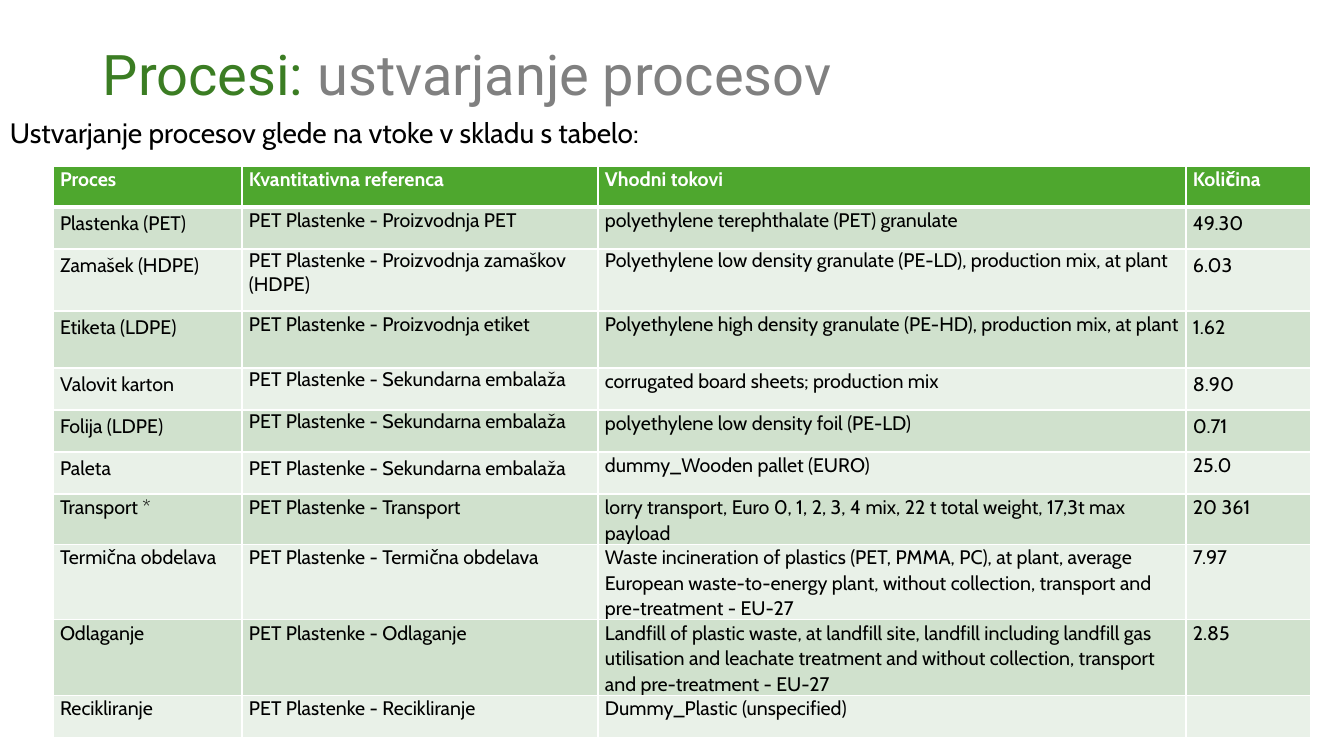
"""Build a slide with a table of processes, their inputs and amounts."""
from pptx import Presentation
from pptx import util as u
from pptx.dml.color import RGBColor
from pptx.enum import text
from pptx.oxml import parse_xml
from pptx.oxml.ns import nsdecls

PX = 914400 / 100.8
WHITE = RGBColor(0xFF, 0xFF, 0xFF)
BLACK = RGBColor(0x00, 0x00, 0x00)
GREY = RGBColor(0x80, 0x80, 0x80)
TITLE_GREEN = RGBColor(0x3B, 0x7D, 0x23)
HEADER_GREEN = RGBColor(0x4E, 0xA7, 0x2E)
BANDS = (RGBColor(0xE9, 0xF1, 0xE8), RGBColor(0xD0, 0xE1, 0xCD))

COLUMN_WIDTHS = (189, 356, 588, 125)
ROW_HEIGHTS = (41, 42, 62, 57) + (42,) * 7
PLAIN = (1.07,) * 4
LOOSE_ENDS = (1.2, 1.07, 1.07, 1.2)
TIGHT_REFERENCE = (1.2, 1, 1.07, 1.2)
TIGHT_MIDDLE = (1.2, 1, 1, 1.2)
LOOSE_START = (1.2, 1.2, 1.07, 1.07)

ROWS = (
    (PLAIN, "Proces", "Kvantitativna referenca", "Vhodni tokovi", "Količina"),
    (LOOSE_ENDS, "Plastenka (PET)", "PET Plastenke - Proizvodnja PET",
     "polyethylene terephthalate (PET) granulate", "49.30"),
    (TIGHT_MIDDLE, "Zamašek (HDPE)", "PET Plastenke - Proizvodnja zamaškov (HDPE)",
     "Polyethylene low density granulate (PE-LD), production mix, at plant", "6.03"),
    (LOOSE_ENDS, "Etiketa (LDPE)", "PET Plastenke - Proizvodnja etiket",
     "Polyethylene high density granulate (PE-HD), production mix, at plant", "1.62"),
    (TIGHT_REFERENCE, "Valovit karton", "PET Plastenke - Sekundarna embalaža",
     "corrugated board sheets; production mix", "8.90"),
    (TIGHT_REFERENCE, "Folija (LDPE)", "PET Plastenke - Sekundarna embalaža",
     "polyethylene low density foil (PE-LD)", "0.71"),
    (LOOSE_START, "Paleta", "PET Plastenke - Sekundarna embalaža",
     "dummy_Wooden pallet (EURO)", "25.0"),
    (PLAIN, "Transport *", "PET Plastenke - Transport",
     "lorry transport, Euro 0, 1, 2, 3, 4 mix, 22 t total weight, 17,3t max payload",
     "20 361"),
    (PLAIN, "Termična obdelava", "PET Plastenke - Termična obdelava",
     "Waste incineration of plastics (PET, PMMA, PC), at plant, average European "
     "waste-to-energy plant, without collection, transport and pre-treatment - EU-27",
     "7.97"),
    (PLAIN, "Odlaganje", "PET Plastenke - Odlaganje",
     "Landfill of plastic waste, at landfill site, landfill including landfill gas "
     "utilisation and leachate treatment and without collection, transport and "
     "pre-treatment - EU-27", "2.85"),
    (PLAIN, "Recikliranje", "PET Plastenke - Recikliranje",
     "Dummy_Plastic (unspecified)", ""),
)


def px(length):
    """Turn px into EMU."""
    return u.Emu(round(length * PX))


def write(para, wording, size=14, font="Cabin", color=BLACK, bold=False, spacing=1.07):
    """Append a formatted span to a paragraph."""
    para.line_spacing = spacing
    span = para.add_run()
    span.text = wording
    span.font.size = u.Pt(size)
    span.font.name = font
    span.font.color.rgb = color
    span.font.bold = bold


def add_text_box(page, left, top, width, height, anchor=text.MSO_ANCHOR.TOP):
    """Add a wrapping text box and return its first paragraph."""
    box = page.shapes.add_textbox(px(left), px(top), px(width), px(height))
    box.text_frame.word_wrap = True
    box.text_frame.vertical_anchor = anchor
    return box.text_frame.paragraphs[0]


def add_border(cell, side, points):
    """Draw a white border along one side of a cell."""
    cell._tc.get_or_add_tcPr().append(parse_xml(
        f'<a:ln{side} {nsdecls("a")} w="{u.Pt(points)}"><a:solidFill>'
        f'<a:srgbClr val="{WHITE}"/></a:solidFill></a:ln{side}>'))


def fill_cell(cell, wording, row_index, spacing):
    """Format one table cell and write its wording."""
    header = row_index == 0
    cell.margin_left = cell.margin_right = px(7)
    cell.margin_top = cell.margin_bottom = 0
    thick_side = {0: "B", 1: "T"}.get(row_index)
    for side in "LRTB":
        add_border(cell, side, 3 if side == thick_side else 1)
    cell.fill.solid()
    cell.fill.fore_color.rgb = HEADER_GREEN if header else BANDS[row_index % 2]
    if wording:
        write(cell.text_frame.paragraphs[0], wording, bold=header,
              color=WHITE if header else BLACK, spacing=spacing)


def add_process_table(page):
    """Add the table of processes."""
    table = page.shapes.add_table(
        len(ROWS), len(COLUMN_WIDTHS), px(53), px(166),
        px(sum(COLUMN_WIDTHS)), px(sum(ROW_HEIGHTS))).table
    table.horz_banding = False
    for column, width in zip(table.columns, COLUMN_WIDTHS):
        column.width = px(width)
    for index, (spacings, *wordings) in enumerate(ROWS):
        table.rows[index].height = px(ROW_HEIGHTS[index])
        for cell, wording, spacing in zip(table.rows[index].cells, wordings, spacings):
            fill_cell(cell, wording, index, spacing)


def main():
    """Build and save the deck."""
    deck = Presentation()
    deck.slide_width, deck.slide_height = px(1344), px(756)
    page = deck.slides.add_slide(deck.slide_layouts[6])
    intro = add_text_box(page, 0, 114, 1159, 52)
    write(intro, "Ustvarjanje procesov glede na vtoke v skladu s tabelo:",
          size=20, spacing=0.9)
    add_process_table(page)
    title = add_text_box(page, 93, 22, 1159, 110, anchor=text.MSO_ANCHOR.MIDDLE)
    for wording, color in (("Procesi: ", TITLE_GREEN), ("ustvarjanje procesov", GREY)):
        write(title, wording, size=40, font="Roboto", color=color, spacing=0.9)
    deck.save("out.pptx")


if __name__ == "__main__":
    main()
